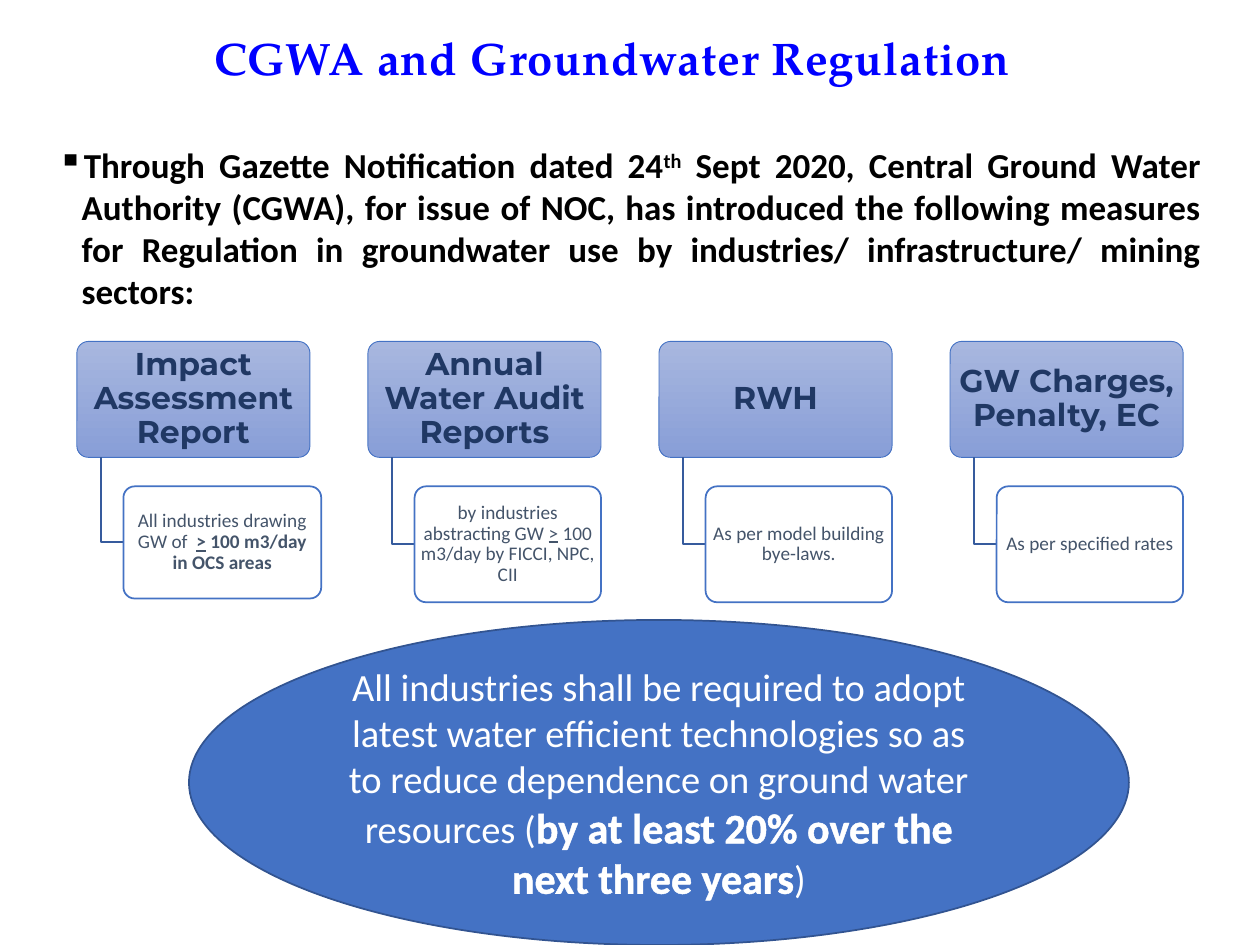
from lxml import etree
from pptx import Presentation
from pptx.dml.color import RGBColor
from pptx.enum import shapes, text
from pptx.oxml.ns import qn
from pptx.util import Inches, Pt

BLUE = RGBColor(0x44, 0x72, 0xC4)
DARK_BLUE = RGBColor(0x32, 0x54, 0x91)
ELBOW_BLUE = RGBColor(0x36, 0x5B, 0x9D)
TITLE_BLUE = RGBColor(0x00, 0x00, 0xFF)
NAVY = RGBColor(0x20, 0x38, 0x64)
SLATE = RGBColor(0x44, 0x54, 0x6A)
CARD_TOP = RGBColor(0xA8, 0xB7, 0xDF)
CARD_BOTTOM = RGBColor(0x88, 0x9E, 0xD7)
WHITE = RGBColor(0xFF, 0xFF, 0xFF)
BLACK = RGBColor(0x00, 0x00, 0x00)

# Each measure: heading, detail runs (text, bold, underline), detail width and height
MEASURES = [
    ("Impact Assessment Report",
     [("All industries drawing GW of  ", False, False), (">", True, True),
      (" 100 m3/day in OCS areas", True, False)], 1.57, 0.89),
    ("Annual Water Audit Reports",
     [("by industries abstracting GW ", False, False), (">", False, True),
      (" 100 m3/day by FICCI, NPC, CII", False, False)], 1.48, 0.92),
    ("RWH", [("As per model building bye-laws.", False, False)], 1.48, 0.92),
    ("GW Charges, Penalty, EC", [("As per specified rates", False, False)], 1.48, 0.92),
]
COLUMN_PITCH = 2.31


def inches(*lengths):
    return [Inches(length) for length in lengths]


def set_font(font, name, size, color, bold=None):
    font.name, font.size, font.bold = name, Pt(size), bold
    font.color.rgb = color


def add_text_box(slide, box):
    frame = slide.shapes.add_textbox(*inches(*box)).text_frame
    frame.word_wrap = True
    return frame.paragraphs[0]


def add_outlined(slide, preset, box, line_color, line_width):
    shape = slide.shapes.add_shape(preset, *inches(*box))
    shape.shadow.inherit = False
    shape.line.color.rgb = line_color
    shape.line.width = Pt(line_width)
    frame = shape.text_frame
    frame.word_wrap = True
    frame.vertical_anchor = text.MSO_ANCHOR.MIDDLE
    frame.paragraphs[0].alignment = text.PP_ALIGN.CENTER
    return shape


def add_card(slide, box, line_width, side_inset, end_inset):
    """Rounded card; returns it with its first paragraph."""
    card = add_outlined(slide, shapes.MSO_SHAPE.ROUNDED_RECTANGLE, box, BLUE, line_width)
    card.adjustments[0] = 0.1
    frame = card.text_frame
    frame.margin_left = frame.margin_right = Inches(side_inset)
    frame.margin_top = frame.margin_bottom = Inches(end_inset)
    paragraph = frame.paragraphs[0]
    paragraph.line_spacing = 0.9
    return card, paragraph


def add_title(slide, box):
    paragraph = add_text_box(slide, box)
    set_font(paragraph.font, "TeX Gyre Pagella", 26, TITLE_BLUE, True)
    run = paragraph.add_run()
    run.text = "CGWA and Groundwater Regulation"
    run.font._element.set("spc", "50")


def add_introduction(slide, box):
    paragraph = add_text_box(slide, box)
    paragraph.alignment = text.PP_ALIGN.JUSTIFY
    paragraph.space_before = Pt(7.5)
    set_font(paragraph.font, "Calibri", 20, BLACK, True)
    properties = paragraph._p.get_or_add_pPr()
    properties.set("marL", str(Inches(0.19)))
    properties.set("indent", str(-Inches(0.19)))
    bullet = etree.Element(qn("a:buChar"), char="▪")
    properties.find(qn("a:defRPr")).addprevious(bullet)
    paragraph.add_run().text = "Through Gazette Notification dated 24"
    ordinal = paragraph.add_run()
    ordinal.text = "th"
    ordinal.font._element.set("baseline", "30000")
    paragraph.add_run().text = (
        " Sept 2020, Central Ground Water Authority (CGWA), for issue of NOC, "
        "has introduced the following measures for Regulation in groundwater use "
        "by industries/ infrastructure/ mining sectors:")


def add_elbow(slide, left, top, right, bottom):
    builder = slide.shapes.build_freeform(Inches(left), Inches(top))
    builder.add_line_segments(
        [inches(left, bottom), inches(right, bottom)], close=False)
    elbow = builder.convert_to_shape()
    elbow.shadow.inherit = False
    elbow.fill.background()
    elbow.line.color.rgb = ELBOW_BLUE
    elbow.line.width = Pt(1)


def add_measure(slide, left, top, heading, detail_runs, detail_width, detail_height):
    """Heading card with a detail card hung below it on an elbow line."""
    width, height = 1.85, 0.92
    header, paragraph = add_card(slide, (left, top, width, height), 0.5, 0.04, 0.03)
    header.fill.gradient()
    header.fill.gradient_angle = 270
    for stop, color in zip(header.fill.gradient_stops, (CARD_TOP, CARD_BOTTOM)):
        stop.color.rgb = color
    set_font(paragraph.font, "Montserrat", 18, NAVY, True)
    paragraph.add_run().text = heading

    detail_left, detail_top = left + 0.37, top + 1.15
    add_elbow(slide, left + 0.19, top + height,
              detail_left, detail_top + detail_height / 2)
    detail, paragraph = add_card(
        slide, (detail_left, detail_top, detail_width, detail_height), 1, 0.02, 0.02)
    detail.fill.solid()
    detail.fill.fore_color.rgb = WHITE
    set_font(paragraph.font, "Calibri", 11, SLATE)
    for words, bold, underline in detail_runs:
        run = paragraph.add_run()
        run.text = words
        run.font.bold, run.font.underline = bold, underline


def add_requirement(slide, box):
    ellipse = add_outlined(slide, shapes.MSO_SHAPE.OVAL, box, DARK_BLUE, 1)
    ellipse.fill.solid()
    ellipse.fill.fore_color.rgb = BLUE
    paragraph = ellipse.text_frame.paragraphs[0]
    set_font(paragraph.font, "Calibri", 22, WHITE)
    paragraph.add_run().text = (
        "All industries shall be required to adopt latest water efficient technologies "
        "so as to reduce dependence on ground water resources (")
    target = paragraph.add_run()
    target.text = "by at least 20% over the next three years"
    target.font.size, target.font.bold = Pt(24), True
    outline = etree.Element(qn("a:ln"), w=str(Pt(0.75)))
    fill = etree.SubElement(outline, qn("a:solidFill"))
    etree.SubElement(fill, qn("a:srgbClr"), val=str(WHITE))
    target.font._element.insert(0, outline)
    paragraph.add_run().text = ")"


def main():
    deck = Presentation()
    deck.slide_width, deck.slide_height = inches(10, 7.5)
    slide = deck.slides.add_slide(deck.slide_layouts[6])
    add_introduction(slide, (0.36, 1.09, 9.27, 2.3))
    for column, measure in enumerate(MEASURES):
        add_measure(slide, 0.61 + column * COLUMN_PITCH, 2.71, *measure)
    add_title(slide, (1.6, 0.19, 7.35, 0.54))
    add_requirement(slide, (1.5, 4.92, 7.46, 2.58))
    deck.save("out.pptx")


if __name__ == "__main__":
    main()
